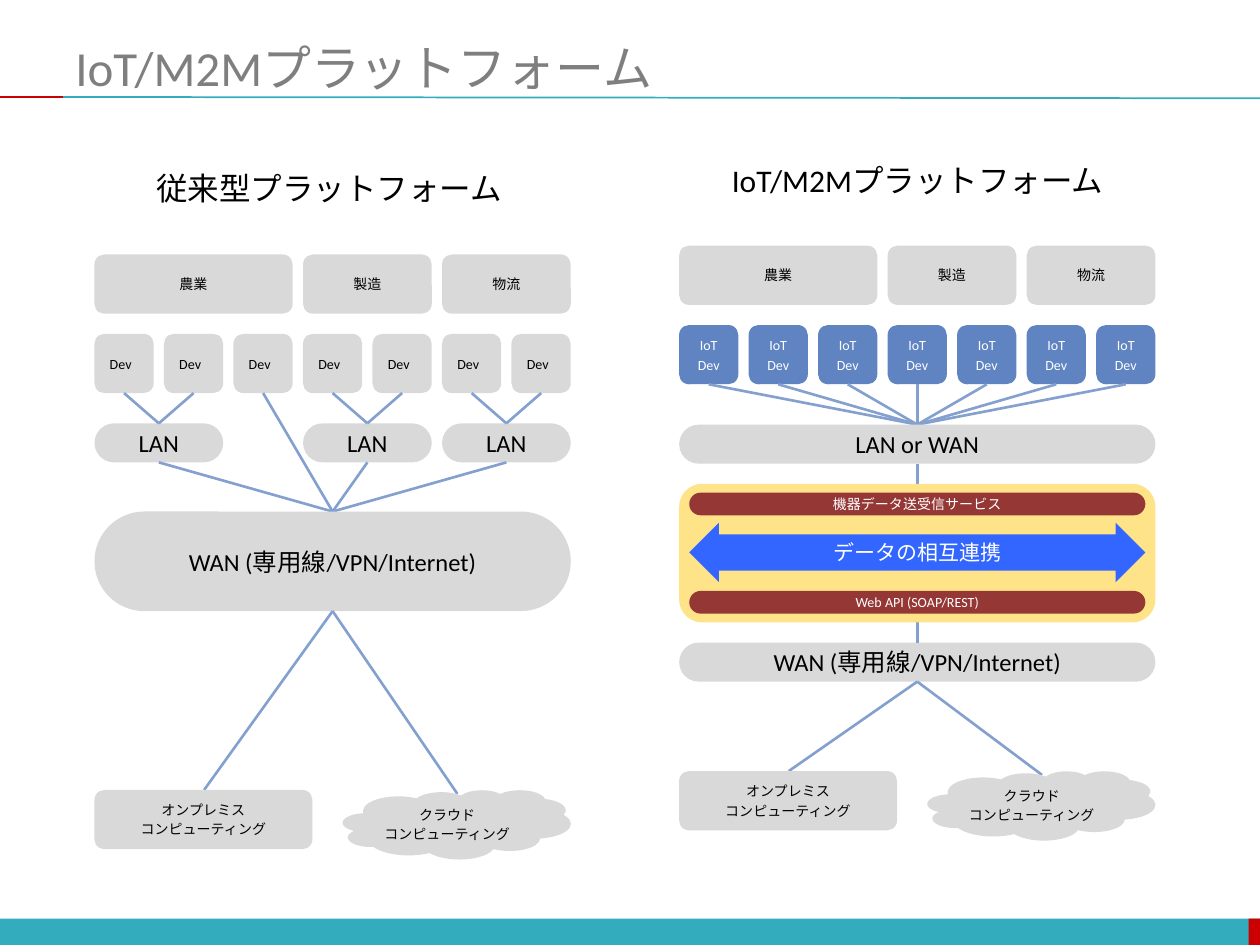
import dataclasses

import lxml.etree
import pptx
import pptx.dml.color
import pptx.enum.shapes
import pptx.enum.text
import pptx.oxml.ns
import pptx.util

Inches = pptx.util.Inches
SHAPES = pptx.enum.shapes.MSO_SHAPE
ALIGN = pptx.enum.text.PP_ALIGN
ANCHOR = pptx.enum.text.MSO_ANCHOR
AUTO_SIZE = pptx.enum.text.MSO_AUTO_SIZE


@dataclasses.dataclass(frozen=True)
class Theme:
    font: str = "Calibri"
    cloud_font: str = "Quicksand"
    title_size: int = 28
    heading_size: int = 18
    network_size: int = 14
    arrow_size: int = 12
    small_size: int = 8
    line_width: float = 1.5
    rule_width: float = 1
    black: str = "000000"
    white: str = "FFFFFF"
    title: str = "7F7F7F"
    gray: str = "D9D9D9"
    teal: str = "33ACBD"
    red: str = "CC0000"
    link: str = "83A0CF"
    device: str = "5F84C1"
    yellow: str = "FFE389"
    service: str = "953735"
    arrow: str = "3366FF"


def rgb(color):
    return pptx.dml.color.RGBColor.from_string(color)


class SlideBuilder:
    def __init__(self, slide, theme):
        self.slide = slide
        self.theme = theme

    def set_text(self, shape, text, size, color, font=None, align=ALIGN.CENTER):
        shape.text_frame.text = text
        for index, paragraph in enumerate(shape.text_frame.paragraphs):
            paragraph.alignment = align
            if index:
                paragraph.space_before = pptx.util.Pt(0.2 * size)
            for run in paragraph.runs:
                run.font.name = font or self.theme.font
                run.font.size = pptx.util.Pt(size)
                run.font.color.rgb = rgb(color)

    def shape(self, kind, left, top, width, height, fill, text="", size=None,
              color=None, align=ALIGN.CENTER, adjustments=()):
        shape = self.slide.shapes.add_shape(
            kind, Inches(left), Inches(top), Inches(width), Inches(height))
        shape.shadow.inherit = False
        shape.fill.solid()
        shape.fill.fore_color.rgb = rgb(fill)
        shape.line.fill.background()
        for index, value in enumerate(adjustments):
            shape.adjustments[index] = value
        if text:
            shape.text_frame.word_wrap = True
            shape.text_frame.vertical_anchor = ANCHOR.MIDDLE
            self.set_text(shape, text, size or self.theme.small_size,
                          color or self.theme.black, align=align)

    def box(self, left, top, width, height, text, fill=None, **options):
        self.shape(SHAPES.ROUNDED_RECTANGLE, left, top, width, height,
                   fill or self.theme.gray, text, **options)

    def pill(self, left, top, width, height, text, **options):
        self.box(left, top, width, height, text, adjustments=[0.5], **options)

    def text(self, left, top, width, height, text, size, color, font=None,
             align=ALIGN.LEFT, wrap=True, anchor=ANCHOR.TOP, grow=True):
        box = self.slide.shapes.add_textbox(
            Inches(left), Inches(top), Inches(width), Inches(height))
        box.text_frame.word_wrap = wrap
        box.text_frame.vertical_anchor = anchor
        box.text_frame.auto_size = AUTO_SIZE.SHAPE_TO_FIT_TEXT if grow else AUTO_SIZE.NONE
        self.set_text(box, text, size, color, font, align)

    def line(self, start, end, color=None, width=None):
        connector = self.slide.shapes.add_connector(
            pptx.enum.shapes.MSO_CONNECTOR.STRAIGHT,
            *[Inches(value) for value in (*start, *end)])
        connector.line.color.rgb = rgb(color or self.theme.link)
        connector.line.width = pptx.util.Pt(width or self.theme.line_width)
        lxml.etree.SubElement(connector.element.spPr, pptx.oxml.ns.qn("a:effectLst"))


# Device grid shared by both platforms
PANEL_WIDTH = 3.78
DEVICE = 0.47
DEVICE_COUNT = 7
PITCH = (PANEL_WIDTH - DEVICE) / (DEVICE_COUNT - 1)
NETWORK_HEIGHT = 0.31
WAN_TEXT = "WAN (専用線/VPN/Internet)"


def span(count):
    return (count - 1) * PITCH + DEVICE


def add_devices(builder, left, top, text, **options):
    """Draw the sectors and devices; return the bottom centre of each device."""
    for name, first, count in (("農業", 0, 3), ("製造", 3, 2), ("物流", 5, 2)):
        builder.box(left + first * PITCH, top, span(count), DEVICE, name)
    device_top = top + 0.63
    lefts = [left + index * PITCH for index in range(DEVICE_COUNT)]
    for device_left in lefts:
        builder.box(device_left, device_top, DEVICE, DEVICE, text, **options)
    return [(device_left + DEVICE / 2, device_top + DEVICE) for device_left in lefts]


def add_computing(builder, left, top, wan_bottom):
    """Draw the on-premises box and the cloud, linked to the WAN above."""
    theme = builder.theme
    builder.line(wan_bottom, (left + 0.87, top))
    builder.line(wan_bottom, (left + 2.88, top + 0.03))
    builder.box(left, top, 1.73, DEVICE, "オンプレミス\nコンピューティング")
    builder.shape(SHAPES.CLOUD, left + 1.97, top, 1.81, 0.55, theme.gray)
    builder.text(left + 2.12, top + 0.08, 1.36, 0.4, "クラウド\nコンピューティング",
                 theme.small_size, theme.black, theme.cloud_font, ALIGN.CENTER)


def add_frame(builder):
    theme = builder.theme
    builder.shape(SHAPES.RECTANGLE, 0, 7.29, 10, 0.22, theme.teal)
    builder.shape(SHAPES.RECTANGLE, 9.91, 7.29, 0.1, 0.22, theme.red)
    builder.line((0.5, 0.77), (10, 0.78), theme.teal, theme.rule_width)
    builder.line((0, 0.77), (0.5, 0.77), theme.red, theme.rule_width)
    builder.text(0.5, 0.3, 9.5, 0.46, "IoT/M2Mプラットフォーム", theme.title_size,
                 theme.title, anchor=ANCHOR.MIDDLE, grow=False)


def add_conventional_platform(builder):
    theme = builder.theme
    left, lan_top, wan_top, wan_height = 0.75, 3.36, 4.06, 0.79
    center = left + PANEL_WIDTH / 2
    builder.text(1.14, 1.29, 2.98, 0.4, "従来型プラットフォーム",
                 theme.heading_size, theme.black, wrap=False)
    ports = add_devices(builder, left, 2.02, "Dev", align=ALIGN.LEFT)

    # Each LAN joins two devices; the third device reaches the WAN directly
    for first in (0, 3, 5):
        lan_left = left + first * PITCH
        lan_center = lan_left + span(2) / 2
        builder.pill(lan_left, lan_top, span(2), NETWORK_HEIGHT, "LAN",
                     size=theme.network_size)
        for port in ports[first:first + 2]:
            builder.line(port, (lan_center, lan_top))
        builder.line((lan_center, lan_top + NETWORK_HEIGHT), (center, wan_top))
    builder.line(ports[2], (center, wan_top))

    builder.pill(left, wan_top, PANEL_WIDTH, wan_height, WAN_TEXT, size=theme.network_size)
    add_computing(builder, left, 6.27, (center, wan_top + wan_height))


def add_iot_platform(builder):
    theme = builder.theme
    left, lan_top, service_top, service_height, wan_top = 5.39, 3.37, 3.84, 1.1, 5.1
    center = left + PANEL_WIDTH / 2
    builder.text(5.71, 1.23, 3.27, 0.4, "IoT/M2Mプラットフォーム",
                 theme.heading_size, theme.black, wrap=False)
    ports = add_devices(builder, left, 1.95, "IoT\nDev", fill=theme.device, color=theme.white)
    for port in ports:
        builder.line(port, (center, lan_top))

    # Networks above and below the service layer
    for top, text in ((lan_top, "LAN or WAN"), (wan_top, WAN_TEXT)):
        builder.pill(left, top, PANEL_WIDTH, NETWORK_HEIGHT, text, size=theme.network_size)
    builder.line((center, lan_top + NETWORK_HEIGHT), (center, service_top))
    builder.line((center, service_top + service_height), (center, wan_top))

    # Service layer
    builder.box(left, service_top, PANEL_WIDTH, service_height, "", fill=theme.yellow)
    inner_left, inner_width = left + 0.08, PANEL_WIDTH - 0.16
    for top, text in ((3.91, "機器データ送受信サービス"), (4.69, "Web API (SOAP/REST)")):
        builder.pill(inner_left, top, inner_width, 0.18, text,
                     fill=theme.service, color=theme.white)
    builder.shape(SHAPES.LEFT_RIGHT_ARROW, inner_left, 4.15, inner_width, 0.47,
                  theme.arrow, "データの相互連携", theme.arrow_size, theme.white,
                  adjustments=[0.61, 0.5])
    add_computing(builder, left, 6.12, (center, wan_top + NETWORK_HEIGHT))


def main():
    presentation = pptx.Presentation()
    presentation.slide_width = Inches(10)
    presentation.slide_height = Inches(7.5)
    slide = presentation.slides.add_slide(presentation.slide_layouts[6])
    builder = SlideBuilder(slide, Theme())
    add_frame(builder)
    add_conventional_platform(builder)
    add_iot_platform(builder)
    presentation.save("out.pptx")


if __name__ == "__main__":
    main()
